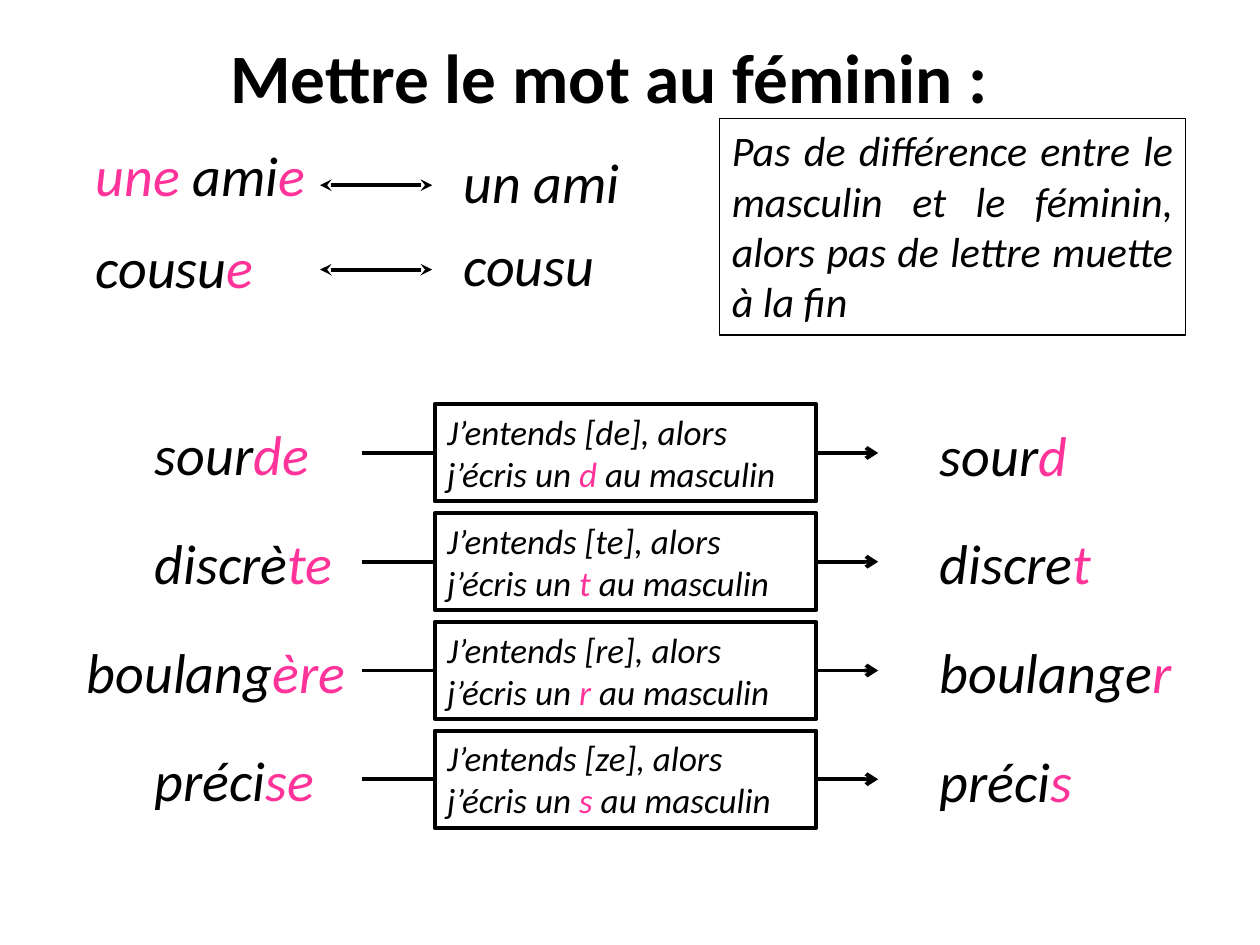
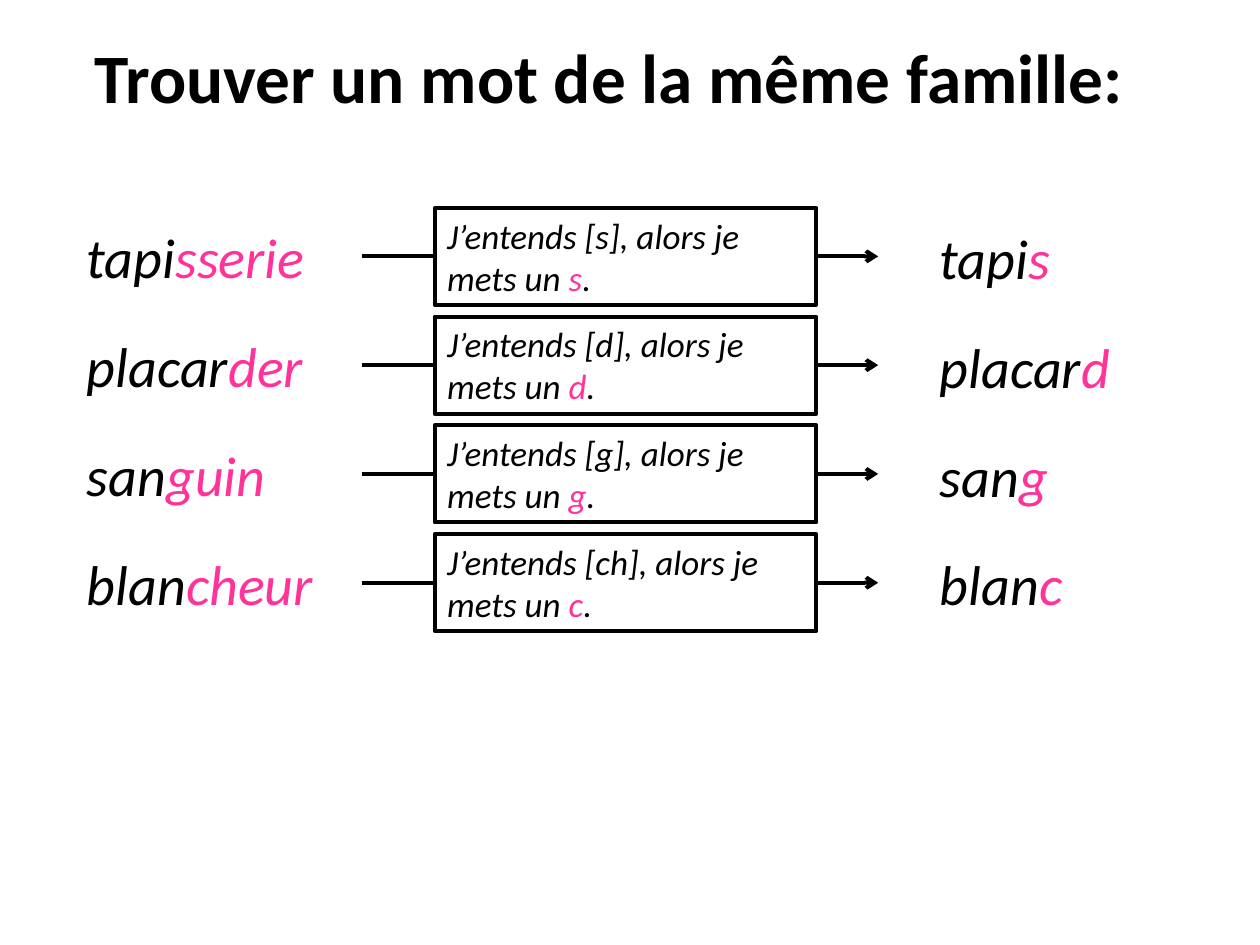
from dataclasses import dataclass
from lxml import etree
from pptx import Presentation
from pptx.dml.color import RGBColor
from pptx.enum.shapes import MSO_CONNECTOR, MSO_SHAPE
from pptx.enum.text import MSO_ANCHOR, MSO_AUTO_SIZE, PP_ALIGN
from pptx.oxml.ns import qn
from pptx.util import Inches, Pt

COLS, ROWS = 100, 75
CELL = Inches(0.1)


@dataclass(frozen=True)
class Theme:
    font: str = "Calibri"
    ink: RGBColor = RGBColor(0x00, 0x00, 0x00)
    accent: RGBColor = RGBColor(0xFF, 0x33, 0x99)
    paper: RGBColor = RGBColor(0xFF, 0xFF, 0xFF)
    title: float = 39.6
    word: float = 32
    note: float = 24
    rule: float = 20
    thick: float = 2.25
    thin: float = 0.75


@dataclass(frozen=True)
class Box:
    left: float
    top: float
    width: float
    height: float

    def inner(self, col, row, width, height):
        return Box(self.left + col, self.top + row, width, height)

    def emu(self):
        return [int(v * CELL) for v in (self.left, self.top, self.width, self.height)]


THEME = Theme()
TITLE_BOX = Box(5, 3, 86.7, 6.1)
WORD_H = 6.4
RULE_H = 7.7
INDENT = 5.4


def write(sp, text, size, align=PP_ALIGN.LEFT):
    tf = sp.text_frame
    tf.word_wrap = True
    tf.auto_size = MSO_AUTO_SIZE.SHAPE_TO_FIT_TEXT
    tf.vertical_anchor = MSO_ANCHOR.TOP
    p = tf.paragraphs[0]
    p.alignment = align
    p.font.name, p.font.size, p.font.italic = THEME.font, Pt(size), True
    for i, part in enumerate(text.split("*")):
        if part:
            r = p.add_run()
            r.text = part
            r.font.color.rgb = THEME.accent if i % 2 else THEME.ink


def add_word(s, box, text):
    write(s.shapes.add_textbox(*box.emu()), text, THEME.word)


def add_frame(s, box, text, size, weight, fill=None, align=PP_ALIGN.LEFT):
    sp = s.shapes.add_shape(MSO_SHAPE.RECTANGLE, *box.emu())
    sp.shadow.inherit = False
    if fill is None:
        sp.fill.background()
    else:
        sp.fill.solid()
        sp.fill.fore_color.rgb = fill
    sp.line.color.rgb = THEME.ink
    sp.line.width = Pt(weight)
    write(sp, text, size, align)


def add_arrow(s, box, **ends):
    x, y, w, h = box.emu()
    line = s.shapes.add_connector(MSO_CONNECTOR.STRAIGHT, x, y, x + w, y + h)
    line.line.color.rgb = THEME.ink
    line.line.width = Pt(THEME.thick)
    for end, kind in ends.items():
        etree.SubElement(line.line._get_or_add_ln(), qn(f"a:{end}"), type=kind)
    etree.SubElement(line._element.spPr, qn("a:effectLst"))


def new_slide(prs, title):
    s = prs.slides.add_slide(prs.slide_layouts[5])
    sp = s.shapes.title
    sp.left, sp.top, sp.width, sp.height = TITLE_BOX.emu()
    tf = sp.text_frame
    tf.text = title
    tf.auto_size = MSO_AUTO_SIZE.NONE
    tf.vertical_anchor = MSO_ANCHOR.MIDDLE
    p = tf.paragraphs[0]
    p.alignment = PP_ALIGN.CENTER
    p.font.name, p.font.size, p.font.bold = THEME.font, Pt(THEME.title), True
    p.font.color.rgb = THEME.ink
    return s


def add_pairs(s, box, pairs):
    for i, (feminine, masculine) in enumerate(pairs):
        add_word(s, box.inner(0, 7.3 * i, 21.3, WORD_H), feminine)
        add_word(s, box.inner(29.2, 0.5 + 6.6 * i, 21.3, WORD_H), masculine)
        add_arrow(s, box.inner(18.8, 4 + 6.7 * i, 8.9, 0), headEnd="stealth", tailEnd="stealth")


def add_rules(s, box, rules):
    pitch = (box.height - RULE_H) / (len(rules) - 1)
    for i, (source, indent, rule, result) in enumerate(rules):
        row = box.inner(0, i * pitch, box.width, RULE_H)
        add_word(s, row.inner(indent, 0.7, 22.8 - indent, WORD_H), source)
        add_arrow(s, row.inner(22.8, RULE_H / 2, 41, 0), tailEnd="arrow")
        add_frame(s, row.inner(28.6, 0, 30.3, RULE_H), rule, THEME.rule, THEME.thick, THEME.paper)
        add_word(s, row.inner(67.7, 0.75, 21.3, WORD_H), result)


def feminine_slide(prs):
    s = new_slide(prs, "Mettre le mot au féminin :")
    add_pairs(s, Box(6.6, 10.7, 50.5, 13.7), [("*une* ami*e*", "un ami"), ("cousu*e*", "cousu")])
    add_frame(
        s, Box(57.1, 9.4, 37, 17.2),
        "Pas de différence entre le masculin et le féminin, alors pas de lettre muette à la fin",
        THEME.note, THEME.thin, align=PP_ALIGN.JUSTIFY)
    words = [
        ("sour*de*", INDENT, "de", "d", "sour*d*"),
        ("discrè*te*", INDENT, "te", "t", "discre*t*"),
        ("boulang*ère*", 0, "re", "r", "boulange*r*"),
        ("préci*se*", INDENT, "ze", "s", "préci*s*"),
    ]
    add_rules(s, Box(5.9, 32.1, 89, 33.6), [
        (source, indent, f"J’entends [{sound}], alors j’écris un *{letter}* au masculin", result)
        for source, indent, sound, letter, result in words])


def family_slide(prs):
    s = new_slide(prs, "Trouver un mot de la même famille:")
    words = [
        ("tapi*sserie*", "s", "s", "tapi*s*"),
        ("placar*der*", "d", "d", "placar*d*"),
        ("san*guin*", "g", "g", "san*g*"),
        ("blan*cheur*", "ch", "c", "blan*c*"),
    ]
    add_rules(s, Box(5.9, 16.5, 89, 33.6), [
        (source, 0, f"J’entends [{sound}], alors je mets un *{letter}*.", result)
        for source, sound, letter, result in words])


def main():
    prs = Presentation()
    prs.slide_width, prs.slide_height = COLS * CELL, ROWS * CELL
    feminine_slide(prs)
    family_slide(prs)
    prs.save("out.pptx")


if __name__ == "__main__":
    main()
